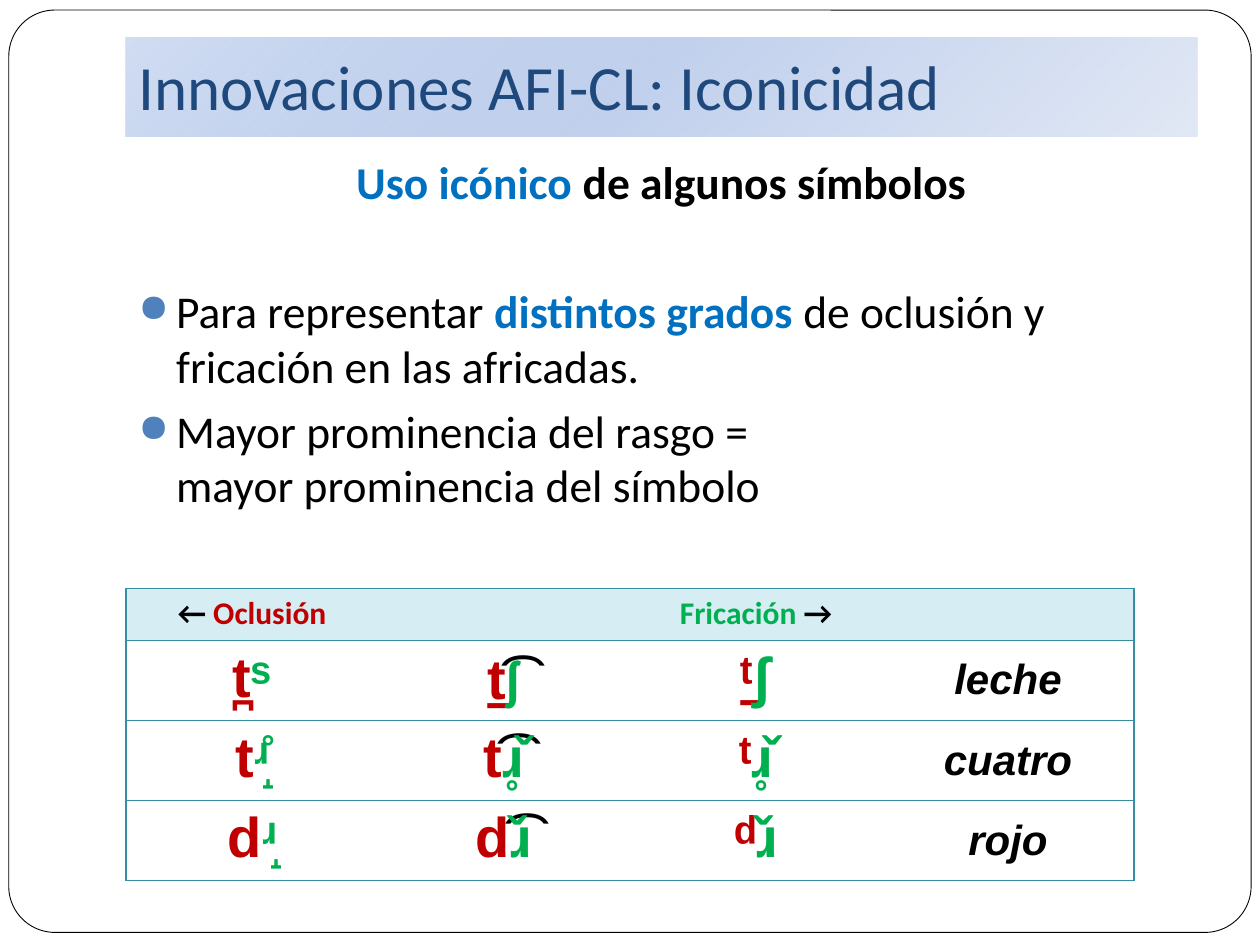
from lxml import etree
from pptx import Presentation
from pptx.dml.color import RGBColor
from pptx.enum.shapes import MSO_SHAPE
from pptx.enum.text import MSO_ANCHOR, PP_ALIGN
from pptx.oxml.ns import qn
from pptx.util import Inches, Pt

ROUNDED, RECTANGLE = MSO_SHAPE.ROUNDED_RECTANGLE, MSO_SHAPE.RECTANGLE
TOP, MIDDLE, BOTTOM = MSO_ANCHOR.TOP, MSO_ANCHOR.MIDDLE, MSO_ANCHOR.BOTTOM
LEFT, CENTER = PP_ALIGN.LEFT, PP_ALIGN.CENTER

BLACK, WHITE, NAVY, BLUE = "000000", "FFFFFF", "1F497D", "0070C0"
RED, GREEN, BULLET, BORDER, HEADER = "C00000", "00B050", "4F81BD", "378DA3", "D5EDF3"
TITLE_STOPS = [(0, "9AB5E4", 45), (50, "C2D1ED", 100), (100, "E1E8F5", 100)]

BODY = {"name": "Calibri", "size": Pt(26), "bold": False}
BOLD_BODY = {**BODY, "bold": True}
HEADING = {**BOLD_BODY, "size": Pt(18)}
SYMBOL = {"name": "Arial", "size": Pt(32), "bold": True}
CALIBRI_SYMBOL = {**SYMBOL, "name": "Calibri"}
WORD = {**SYMBOL, "size": Pt(24), "italic": True}

TIE = ("͡", BLACK, SYMBOL)
HEADER_CELLS = [
    [("← ", BLACK, HEADING), ("Oclusión", RED, HEADING)],
    [],
    [("Fricación", GREEN, HEADING), (" →", BLACK, HEADING)],
    [],
]
SYMBOL_ROWS = [
    (("t̪", "ˢ"), ("t̠", "ʃ", CALIBRI_SYMBOL), ("ᵗ̠", "ʃ"), "leche"),
    (("t", "ʴ̝̊"), ("t", "ɹ̥̌", SYMBOL), ("ᵗ", "ɹ̥̌"), "cuatro"),
    (("d", "ʴ̝"), ("d", "ɹ̌", SYMBOL), ("ᵈ", "ɹ̌"), "rojo"),
]
ROW_HEIGHTS = [0.41, 0.64, 0.6, 0.6]


def color(value):
    return RGBColor.from_string(value)


def add_element(parent, tag, **attributes):
    return etree.SubElement(parent, qn(tag), {key: str(value) for key, value in attributes.items()})


def set_format(target, values):
    for name, value in values.items():
        setattr(target, name, value)


def write_runs(paragraph, runs, alignment):
    paragraph.alignment = alignment
    for text, run_color, font in runs:
        for index, line in enumerate(text.split("\n")):
            if index:
                paragraph.add_line_break()
            run = paragraph.add_run()
            run.text = line
            set_format(run.font, font)
            run.font.color.rgb = color(run_color)


def add_bullet(paragraph):
    properties = paragraph._p.get_or_add_pPr()
    properties.set("marL", str(Inches(0.3)))
    properties.set("indent", str(Inches(-0.3)))
    add_element(add_element(properties, "a:buClr"), "a:srgbClr", val=BULLET)
    add_element(properties, "a:buSzPct", val=85000)
    add_element(properties, "a:buChar", char="●")


def add_frame(slide):
    shape = slide.shapes.add_shape(ROUNDED, Inches(0.07), Inches(0.08), Inches(9.86), Inches(7.32))
    shape.adjustments[0] = 0.05
    shape.shadow.inherit = False
    shape.fill.solid()
    shape.fill.fore_color.rgb = color(WHITE)
    shape.line.color.rgb = color(BLACK)
    shape.line.width = Pt(0.5)


def fill_radial(shape, stops):
    shape.fill.background()
    properties = shape._element.spPr
    gradient = etree.Element(qn("a:gradFill"), rotWithShape="1")
    stop_list = add_element(gradient, "a:gsLst")
    for position, value, opacity in stops:
        stop = add_element(stop_list, "a:gs", pos=position * 1000)
        stop_color = add_element(stop, "a:srgbClr", val=value)
        if opacity < 100:
            add_element(stop_color, "a:alpha", val=opacity * 1000)
    circle = etree.SubElement(gradient, qn("a:path"), {"path": "circle"})
    add_element(circle, "a:fillToRect", r=100000, b=100000)
    properties.replace(properties.find(qn("a:noFill")), gradient)


def add_title(slide, text):
    shape = slide.shapes.add_shape(RECTANGLE, Inches(1), Inches(0.3), Inches(8.5), Inches(0.78))
    shape.shadow.inherit = False
    shape.line.fill.background()
    fill_radial(shape, TITLE_STOPS)
    set_format(shape.text_frame, {
        "word_wrap": True, "vertical_anchor": BOTTOM, "margin_bottom": Inches(0.1),
    })
    font = {"name": "Calibri", "size": Pt(36)}
    write_runs(shape.text_frame.paragraphs[0], [(text, NAVY, font)], LEFT)


def add_body(slide):
    box = slide.shapes.add_textbox(Inches(1), Inches(1.17), Inches(8.5), Inches(3.3))
    frame = box.text_frame
    frame.word_wrap = True
    subtitle = frame.paragraphs[0]
    subtitle.space_before = Pt(5.8)
    write_runs(subtitle, [
        ("Uso icónico", BLUE, BOLD_BODY), (" de algunos símbolos", BLACK, BOLD_BODY),
    ], CENTER)
    bullets = [
        (43, [
            ("Para representar ", BLACK, BODY),
            ("distintos grados ", BLUE, BOLD_BODY),
            ("de oclusión y fricación en las africadas.", BLACK, BODY),
        ]),
        (5.8, [("Mayor prominencia del rasgo =\nmayor prominencia del símbolo", BLACK, BODY)]),
    ]
    for gap, runs in bullets:
        paragraph = frame.add_paragraph()
        paragraph.space_before = Pt(gap)
        write_runs(paragraph, runs, LEFT)
        add_bullet(paragraph)


def set_borders(cell, visible):
    properties = cell._tc.get_or_add_tcPr()
    for index, side in enumerate("LRTB"):
        line = etree.Element(qn(f"a:ln{side}"), w=str(Pt(0.75)))
        if side in visible:
            add_element(add_element(line, "a:solidFill"), "a:srgbClr", val=BORDER)
        else:
            add_element(line, "a:noFill")
        properties.insert(index, line)


def symbol_cells(stop, tied, release, word):
    def pair(symbols):
        return [(symbols[0], RED, SYMBOL), (symbols[1], GREEN, SYMBOL)]

    closure, friction, font = tied
    return [
        pair(stop),
        [(closure, RED, SYMBOL), TIE, (friction, GREEN, font)],
        pair(release),
        [(word, BLACK, WORD)],
    ]


def add_symbol_table(slide):
    rows = [HEADER_CELLS] + [symbol_cells(*row) for row in SYMBOL_ROWS]
    frame = slide.shapes.add_table(
        len(rows), 4, Inches(1), Inches(4.67), Inches(8), Inches(sum(ROW_HEIGHTS)))
    table = frame.table
    set_format(table, {"first_row": False, "horz_banding": False})
    for row_index, row in enumerate(rows):
        table.rows[row_index].height = Inches(ROW_HEIGHTS[row_index])
        for column_index, runs in enumerate(row):
            cell = table.cell(row_index, column_index)
            if row_index == 0:
                cell.fill.solid()
                cell.fill.fore_color.rgb = color(HEADER)
            else:
                cell.fill.background()
            cell.vertical_anchor = MIDDLE if row_index and column_index == 3 else TOP
            write_runs(cell.text_frame.paragraphs[0], runs, CENTER)
            set_borders(cell, "TB" + {0: "L", 3: "R"}.get(column_index, ""))


def main():
    presentation = Presentation()
    presentation.slide_width = Inches(10)
    presentation.slide_height = Inches(7.5)
    slide = presentation.slides.add_slide(presentation.slide_layouts[6])
    add_frame(slide)
    add_title(slide, "Innovaciones AFI-CL: Iconicidad")
    add_body(slide)
    add_symbol_table(slide)
    presentation.save("out.pptx")


if __name__ == "__main__":
    main()
